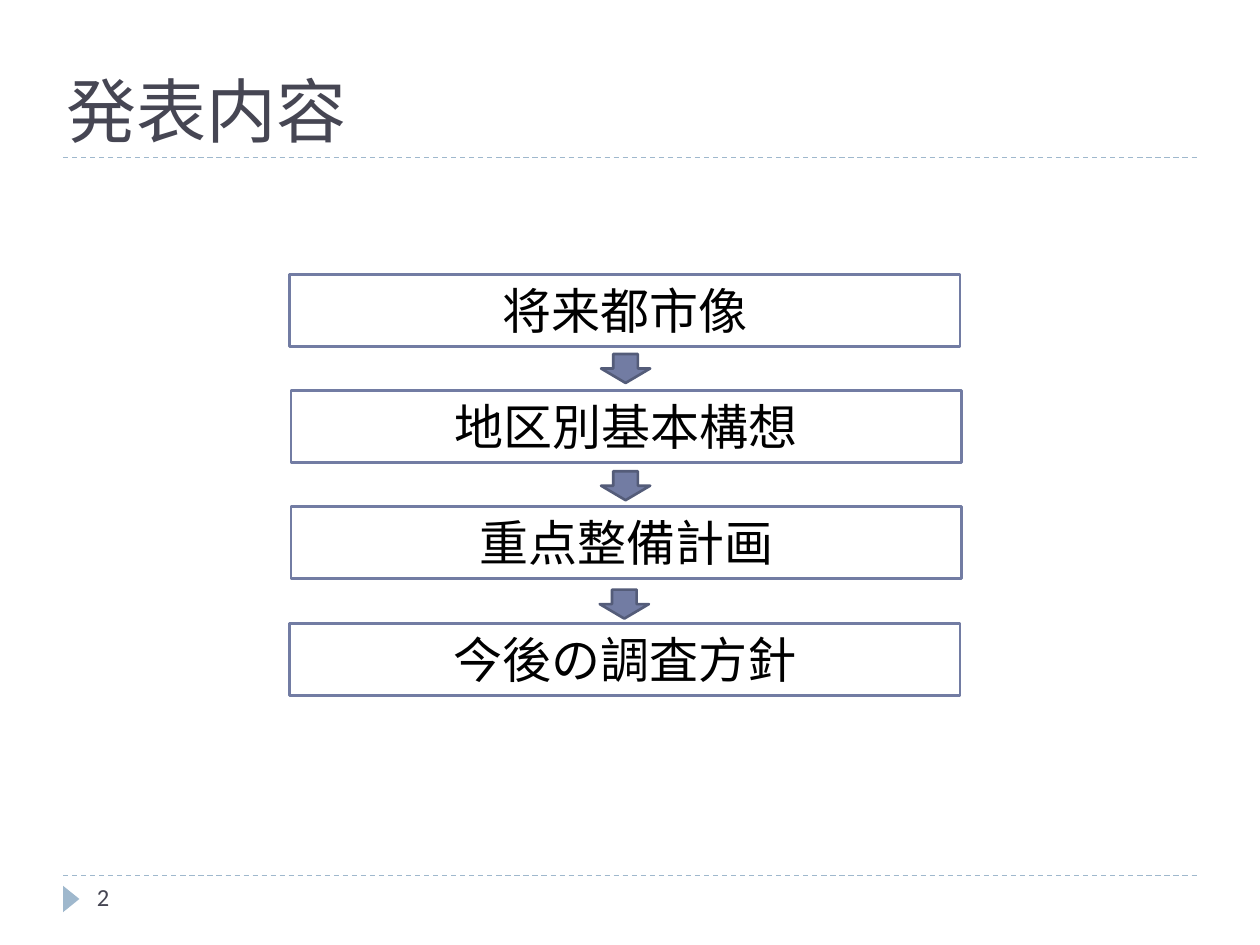
from dataclasses import dataclass

from lxml.etree import SubElement
from pptx import Presentation
from pptx.dml.color import RGBColor
from pptx.enum.dml import MSO_LINE_DASH_STYLE as Dash
from pptx.enum.shapes import MSO_CONNECTOR as Connector
from pptx.enum.shapes import MSO_SHAPE as Shape
from pptx.enum.text import MSO_ANCHOR as Anchor
from pptx.enum.text import PP_ALIGN as Align
from pptx.oxml.ns import qn
from pptx.util import Emu, Pt

EMU_PER_PX = 9144  # 100 px to the inch


@dataclass(frozen=True)
class Theme:
    white: str = "FFFFFF"
    black: str = "000000"
    heading: str = "464653"
    accent: str = "727CA3"
    accent_dark: str = "545C79"
    rule: str = "9FB8CD"
    title_font: str = "TeX Gyre Bonum"
    body_font: str = "Calibri"
    title_size: int = 40
    step_size: int = 28
    number_size: int = 14
    outline: float = 1.5
    hairline: float = 0.75


@dataclass(frozen=True)
class Box:
    left: int
    top: int
    width: int
    height: int


@dataclass(frozen=True)
class Step:
    text: str
    left: int


THEME = Theme()
STEPS = [
    Step("将来都市像", 230),
    Step("地区別基本構想", 231),
    Step("重点整備計画", 231),
    Step("今後の調査方針", 230),
]
ARROW_LEFTS = [477, 477, 476]
STEP_TOP, LAST_STEP_TOP = 218, 495
ARROW_TOP, LAST_ARROW_TOP = 281, 468


def px(length: int) -> Emu:
    return Emu(length * EMU_PER_PX)


def color(code: str) -> RGBColor:
    return RGBColor.from_string(code)


def spread(first: int, last: int, count: int) -> list[int]:
    """Evenly spaced positions from first to last."""
    return [first + (last - first) * i // (count - 1) for i in range(count)]


def set_text(shape, text: str, font: str, size: int, ink: str,
             align=Align.LEFT, anchor=Anchor.TOP) -> None:
    frame = shape.text_frame
    frame.word_wrap = True
    frame.vertical_anchor = anchor
    paragraph = frame.paragraphs[0]
    paragraph.text = text
    paragraph.alignment = align
    paragraph.font.name = font
    paragraph.font.size = Pt(size)
    paragraph.font.color.rgb = color(ink)


def add_shape(slide, kind, box: Box, fill: str, line: str | None = None):
    shape = slide.shapes.add_shape(
        kind, px(box.left), px(box.top), px(box.width), px(box.height))
    shape.shadow.inherit = False
    shape.fill.solid()
    shape.fill.fore_color.rgb = color(fill)
    if line:
        shape.line.color.rgb = color(line)
        shape.line.width = Pt(THEME.outline)
    else:
        shape.line.fill.background()
    return shape


def add_text_box(slide, box: Box):
    return slide.shapes.add_textbox(
        px(box.left), px(box.top), px(box.width), px(box.height))


def add_rule(slide, top: int) -> None:
    rule = slide.shapes.add_connector(
        Connector.STRAIGHT, px(50), px(top), px(950), px(top))
    rule.line.color.rgb = color(THEME.rule)
    rule.line.width = Pt(THEME.hairline)
    rule.line.dash_style = Dash.DASH
    SubElement(rule._element.spPr, qn("a:effectLst"))


def add_step(slide, step: Step, top: int) -> None:
    shape = add_shape(slide, Shape.RECTANGLE, Box(step.left, top, 532, 57),
                      THEME.white, THEME.accent)
    set_text(shape, step.text, THEME.body_font, THEME.step_size, THEME.black,
             Align.CENTER)


def main() -> None:
    presentation = Presentation()
    presentation.slide_width, presentation.slide_height = px(1000), px(750)
    slide = presentation.slides.add_slide(presentation.slide_layouts[6])

    # Dashed rules and page marker
    for top in (695, 125):
        add_rule(slide, top)
    marker = add_shape(slide, Shape.ISOSCELES_TRIANGLE,
                       Box(46, 707, 21, 13), THEME.rule)
    marker.rotation = 90

    # Title and page number
    set_text(add_text_box(slide, Box(43, 0, 820, 125)), "発表内容",
             THEME.title_font, THEME.title_size, THEME.heading,
             anchor=Anchor.BOTTOM)
    set_text(add_text_box(slide, Box(67, 695, 217, 40)), "2",
             THEME.body_font, THEME.number_size, THEME.heading)

    # Steps joined by arrows
    for step, top in zip(STEPS, spread(STEP_TOP, LAST_STEP_TOP, len(STEPS))):
        add_step(slide, step, top)
    arrow_tops = spread(ARROW_TOP, LAST_ARROW_TOP, len(ARROW_LEFTS))
    for left, top in zip(ARROW_LEFTS, arrow_tops):
        add_shape(slide, Shape.DOWN_ARROW, Box(left, top, 39, 23),
                  THEME.accent, THEME.accent_dark)

    presentation.save("out.pptx")


if __name__ == "__main__":
    main()
